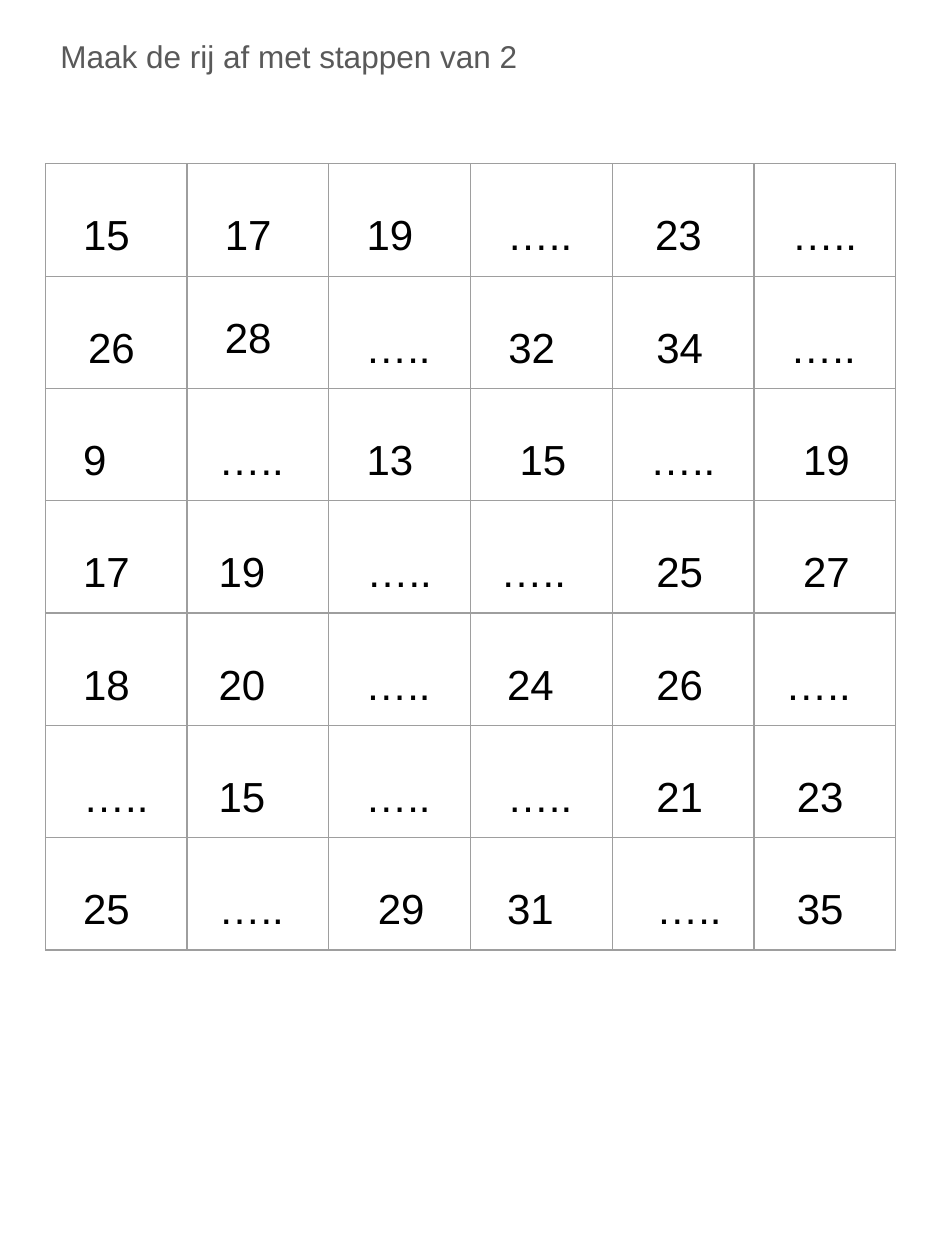
import lxml.etree
import pptx
import pptx.dml.color
import pptx.enum.text
import pptx.oxml.ns
import pptx.util

Inches = pptx.util.Inches
Pt = pptx.util.Pt

GAP = "….."
# Each row: (answer or gap, left indent in inches)
ROWS = [
    [("15", 0.2), ("17", 0.2), ("19", 0.2), (GAP, 0.19), ("23", 0.24), (GAP, 0.2)],
    [("26", 0.24), ("28", 0.2), (GAP, 0.19), ("32", 0.2), ("34", 0.25), (GAP, 0.19)],
    [("9", 0.2), (GAP, 0.15), ("13", 0.2), ("15", 0.29), (GAP, 0.2), ("19", 0.29)],
    [("17", 0.2), ("19", 0.15), (GAP, 0.2), (GAP, 0.14), ("25", 0.25), ("27", 0.29)],
    [("18", 0.2), ("20", 0.15), (GAP, 0.19), ("24", 0.19), ("26", 0.25), (GAP, 0.15)],
    [(GAP, 0.2), ("15", 0.15), (GAP, 0.19), (GAP, 0.19), ("21", 0.25), ("23", 0.24)],
    [("25", 0.2), (GAP, 0.15), ("29", 0.29), ("31", 0.19), (GAP, 0.25), ("35", 0.24)],
]
RAISED = (1, 1)  # the one cell whose number sits higher


def rgb(hex_string):
    return pptx.dml.color.RGBColor.from_string(hex_string)


def format_run(r, size, color):
    r.font.name = "Arial"
    r.font.size = Pt(size)
    r.font.bold = False
    r.font.color.rgb = rgb(color)


def set_borders(cell, color, width):
    tc_pr = cell._tc.get_or_add_tcPr()
    qn = pptx.oxml.ns.qn
    for i, side in enumerate(("a:lnL", "a:lnR", "a:lnT", "a:lnB")):
        ln = lxml.etree.Element(qn(side), w=str(Pt(width)))
        fill = lxml.etree.SubElement(ln, qn("a:solidFill"))
        lxml.etree.SubElement(fill, qn("a:srgbClr"), val=color)
        tc_pr.insert(i, ln)


def add_title(s, left, top, width, height):
    sp = s.shapes.title
    sp.left, sp.top, sp.width, sp.height = left, top, width, height
    tf = sp.text_frame
    tf.text = "Maak de rij af met stappen van 2"
    tf.word_wrap = True
    tf.auto_size = pptx.enum.text.MSO_AUTO_SIZE.NONE
    tf.vertical_anchor = pptx.enum.text.MSO_ANCHOR.TOP
    p = tf.paragraphs[0]
    p.alignment = pptx.enum.text.PP_ALIGN.LEFT
    format_run(p.runs[0], 18, "595959")


def fill_cell(cell, text, indent, top):
    cell.fill.background()
    set_borders(cell, "9E9E9E", 0.75)
    cell.margin_left = Inches(0.1 + indent)
    cell.margin_right = cell.margin_bottom = Inches(0.1)
    cell.margin_top = Inches(top)
    cell.text_frame.text = text
    format_run(cell.text_frame.paragraphs[0].runs[0], 24, "000000")


def add_number_grid(s, left, top, width, height):
    table = s.shapes.add_table(len(ROWS), len(ROWS[0]), left, top, width, height).table
    table.first_row = table.horz_banding = False
    for i, row in enumerate(ROWS):
        for j, (text, indent) in enumerate(row):
            fill_cell(table.cell(i, j), text, indent, 0.31 if (i, j) == RAISED else 0.39)


def main():
    prs = pptx.Presentation()
    prs.slide_width, prs.slide_height = Inches(7.5), Inches(10)
    s = prs.slides.add_slide(prs.slide_layouts[5])
    add_title(s, Inches(0.38), Inches(0.24), Inches(4.55), Inches(1.01))
    add_number_grid(s, Inches(0.36), Inches(1.3), Inches(6.75), Inches(6.24))
    prs.save("out.pptx")


if __name__ == "__main__":
    main()
